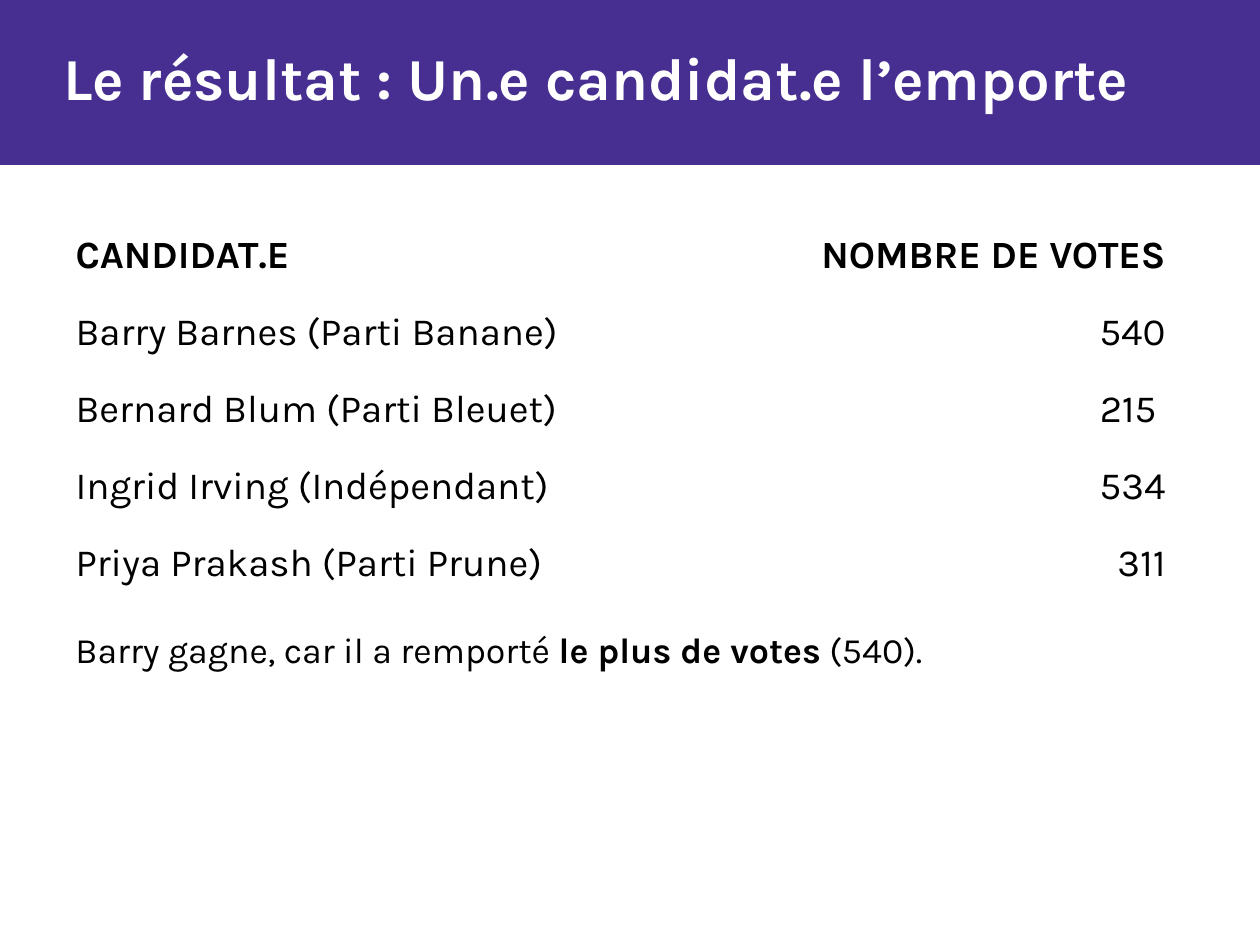
import dataclasses
import typing

import lxml.etree
import pptx
import pptx.dml.color
import pptx.enum.shapes
import pptx.enum.text
import pptx.oxml.ns
import pptx.util

Pt = pptx.util.Pt
Align = pptx.enum.text.PP_ALIGN
Anchor = pptx.enum.text.MSO_ANCHOR


@dataclasses.dataclass(frozen=True)
class Theme:
    font: str = "Karla"
    purple: str = "472F92"
    white: str = "FFFFFF"
    black: str = "000000"
    title_size: float = 34
    table_size: float = 22
    verdict_size: float = 20.4
    border_width: float = 0.75


@dataclasses.dataclass(frozen=True)
class Result:
    candidate: str
    votes: str
    bold: bool = False


class Phrase(typing.NamedTuple):
    text: str
    bold: bool = False


THEME = Theme()
TITLE = "Le résultat : Un.e candidat.e l’emporte"
RESULTS = [
    Result("CANDIDAT.E", "NOMBRE DE VOTES", bold=True),
    Result("Barry Barnes (Parti Banane)", "540"),
    Result("Bernard Blum (Parti Bleuet)", "215 "),
    Result("Ingrid Irving (Indépendant)", "534"),
    Result("Priya Prakash (Parti Prune)", "311"),
]
VERDICT = [
    Phrase("Barry gagne, car il a remporté "),
    Phrase("le plus de votes", bold=True),
    Phrase(" (540)."),
]
COLUMN_WIDTHS = (410.4, 226.8)
ROW_HEIGHT = 43.8


def apply(target: typing.Any, settings: dict[str, typing.Any]) -> None:
    for name, value in settings.items():
        setattr(target, name, value)


def rgb(color: str) -> pptx.dml.color.RGBColor:
    return pptx.dml.color.RGBColor.from_string(color)


def write(paragraph, phrases: list[Phrase], size: float, color: str,
          spacing: float, align=Align.LEFT) -> None:
    apply(paragraph, {"alignment": align, "line_spacing": spacing,
                      "space_before": Pt(0)})
    for phrase in phrases:
        run = paragraph.add_run()
        run.text = phrase.text
        apply(run.font, {"name": THEME.font, "size": Pt(size), "bold": phrase.bold})
        run.font.color.rgb = rgb(color)


def add_borders(cell, color: str, width: float) -> None:
    properties = cell._tc.get_or_add_tcPr()
    for side in ("a:lnL", "a:lnR", "a:lnT", "a:lnB"):
        line = lxml.etree.SubElement(properties, pptx.oxml.ns.qn(side), w=str(Pt(width)))
        fill = lxml.etree.SubElement(line, pptx.oxml.ns.qn("a:solidFill"))
        lxml.etree.SubElement(fill, pptx.oxml.ns.qn("a:srgbClr"), val=color)


def add_title(slide) -> None:
    band = slide.shapes.add_shape(pptx.enum.shapes.MSO_SHAPE.RECTANGLE,
                                  0, 0, Pt(720), Pt(94.3))
    band.shadow.inherit = False
    band.fill.solid()
    band.fill.fore_color.rgb = rgb(THEME.purple)
    band.line.fill.background()
    slide.shapes._spTree.insert(2, band._element)  # behind the title

    title = slide.shapes.title
    apply(title, {"left": Pt(28.8), "top": Pt(5.8),
                  "width": Pt(667.4), "height": Pt(81.4)})
    apply(title.text_frame, {"word_wrap": True, "vertical_anchor": Anchor.MIDDLE})
    write(title.text_frame.paragraphs[0], [Phrase(TITLE, bold=True)],
          THEME.title_size, THEME.white, spacing=0.9)


def add_results(slide) -> None:
    table = slide.shapes.add_table(
        len(RESULTS), len(COLUMN_WIDTHS), Pt(36), Pt(122.4),
        Pt(sum(COLUMN_WIDTHS)), Pt(ROW_HEIGHT * len(RESULTS))).table
    apply(table, {"first_row": False, "horz_banding": False})
    for column, width in zip(table.columns, COLUMN_WIDTHS):
        column.width = Pt(width)
    margins = {f"margin_{side}": Pt(7.2) for side in ("left", "right", "top", "bottom")}
    for row, result in zip(table.rows, RESULTS):
        row.height = Pt(ROW_HEIGHT)
        entries = ((result.candidate, Align.LEFT), (result.votes, Align.RIGHT))
        for cell, (text, align) in zip(row.cells, entries):
            apply(cell, margins)
            add_borders(cell, THEME.white, THEME.border_width)
            cell.fill.background()
            write(cell.text_frame.paragraphs[0], [Phrase(text, result.bold)],
                  THEME.table_size, THEME.black, spacing=1.15, align=align)


def add_verdict(slide) -> None:
    verdict = slide.shapes.add_textbox(Pt(36), Pt(351.4), Pt(528.5), Pt(40.3))
    verdict.text_frame.word_wrap = True
    write(verdict.text_frame.paragraphs[0], VERDICT,
          THEME.verdict_size, THEME.black, spacing=1.15)


def main() -> None:
    presentation = pptx.Presentation()
    apply(presentation, {"slide_width": Pt(720), "slide_height": Pt(540)})
    slide = presentation.slides.add_slide(presentation.slide_layouts.get_by_name("Title Only"))
    add_title(slide)
    add_results(slide)
    add_verdict(slide)
    presentation.save("out.pptx")


if __name__ == "__main__":
    main()
